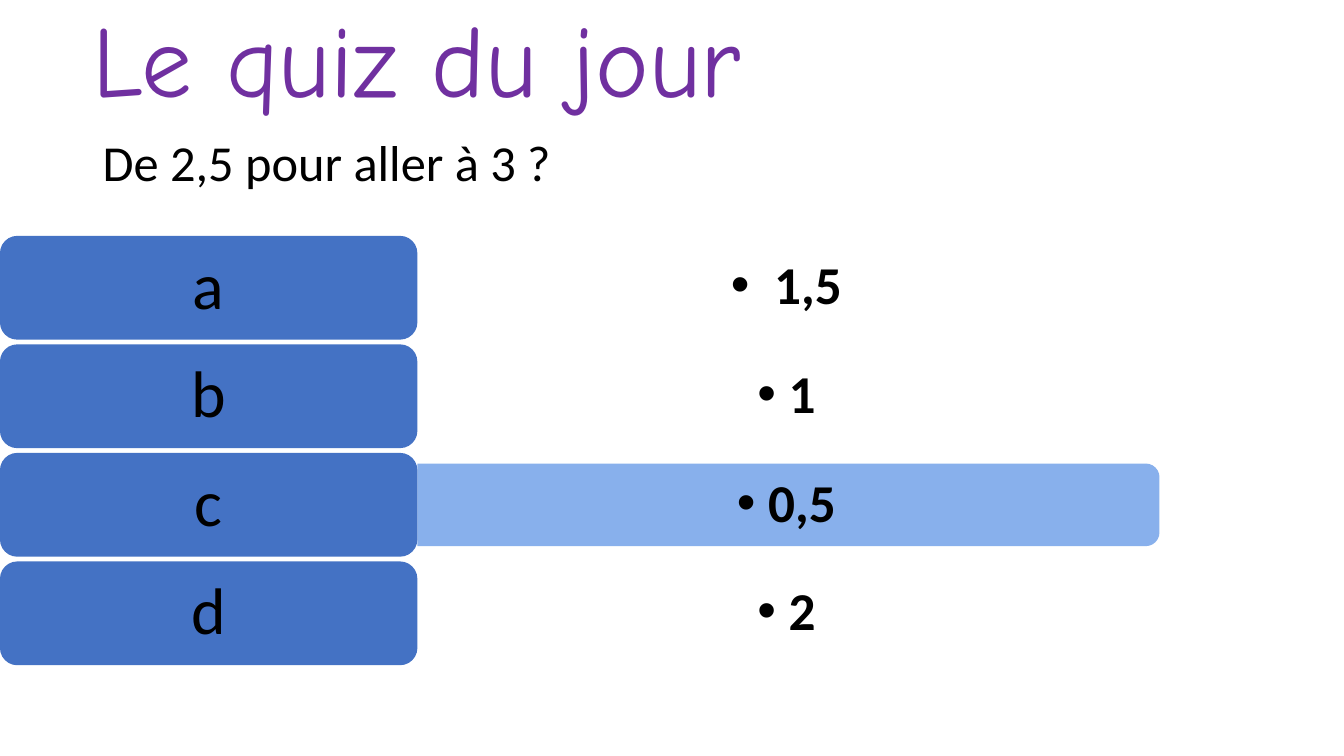
from dataclasses import dataclass

from lxml.etree import SubElement
from pptx import Presentation
from pptx.dml.color import RGBColor as RGB
from pptx.enum.shapes import MSO_SHAPE as Kind
from pptx.enum.text import MSO_ANCHOR as Anchor, MSO_AUTO_SIZE as Fit, PP_ALIGN as Align
from pptx.oxml.ns import qn
from pptx.util import Inches, Pt


@dataclass(frozen=True)
class Theme:
    violet: str = "7030A0"
    ink: str = "000000"
    blue: str = "4472C4"
    light: str = "7CA8EA"
    white: str = "FFFFFF"
    body: str = "Calibri"
    hand: str = "Comic Neue"
    title: float = 72.5
    ask: int = 36
    mark: int = 47
    reply: int = 38


THEME = Theme()
ROWS = [("a", " 1,5"), ("b", "1"), ("c", "0,5"), ("d", "2")]
RIGHT = "c"
TOP, LAST, TALL, WIDE = 2.34, 5.57, 1.03, 4.14
BAR_W, BAR_H = 7.36, 0.82
TEXT_W, TEXT_H = 7.32, 0.74


def apply(item, form):
    for name, value in form.items():
        setattr(item, name, value)


def write(shape, text, size, color=THEME.ink, face=THEME.body, bold=False,
          align=Align.CENTER, space=0.9, pad=(0.1, 0.05), anchor=Anchor.MIDDLE):
    frame = shape.text_frame
    side, edge = map(Inches, pad)
    apply(frame, dict(word_wrap=True, auto_size=Fit.NONE, vertical_anchor=anchor,
                      margin_left=side, margin_right=side,
                      margin_top=edge, margin_bottom=edge))
    para = frame.paragraphs[0]
    apply(para, dict(alignment=align, line_spacing=space))
    run = para.add_run()
    run.text = text
    apply(run.font, dict(name=face, size=Pt(size), bold=bold))
    run.font.color.rgb = RGB.from_string(color)
    return para


def add_box(slide, *place):
    return slide.shapes.add_textbox(*map(Inches, place))


def add_block(slide, kind, color, *place):
    block = slide.shapes.add_shape(kind, *map(Inches, place))
    block.shadow.inherit = False
    block.fill.solid()
    block.fill.fore_color.rgb = RGB.from_string(color)
    block.line.fill.background()
    return block


def add_bar(slide, color, mid):
    left = WIDE + (BAR_W - BAR_H) / 2
    bar = add_block(slide, Kind.ROUND_2_SAME_RECTANGLE, color,
                    left, mid - BAR_W / 2, BAR_H, BAR_W)
    bar.rotation = 90
    tint = bar.fill._xPr.find(qn("a:solidFill"))[0]
    SubElement(tint, qn("a:alpha"), val="90000")


def add_bullet(para):
    props = para._p.get_or_add_pPr()
    props.set("marL", str(Inches(0.31)))
    props.set("indent", str(Inches(-0.31)))
    SubElement(props, qn("a:buFont"), typeface="Arial")
    SubElement(props, qn("a:buChar"), char="•")


def add_row(slide, top, mark, reply):
    mid = top + TALL / 2
    add_bar(slide, THEME.light if mark == RIGHT else THEME.white, mid)
    box = add_box(slide, WIDE, mid - TEXT_H / 2, TEXT_W, TEXT_H)
    add_bullet(write(box, reply, THEME.reply, bold=True, pad=(0.16, 0.08)))
    label = add_block(slide, Kind.ROUNDED_RECTANGLE, THEME.blue, 0, top, WIDE, TALL)
    write(label, mark, THEME.mark, pad=(0.2, 0.1))


def add_title(slide, text):
    title = slide.shapes.title
    apply(title, dict(left=Inches(0.92), top=Inches(0.27),
                      width=Inches(11.5), height=Inches(1.15)))
    write(title, text, THEME.title, THEME.violet, THEME.hand,
          align=Align.LEFT, pad=(0, 0))
    title.text_frame.margin_bottom = Inches(0.4)


def main():
    deck = Presentation()
    apply(deck, dict(slide_width=Inches(13.33), slide_height=Inches(7.5)))
    slide = deck.slides.add_slide(deck.slide_layouts[5])
    add_title(slide, "Le quiz du jour")
    step = (LAST - TOP) / (len(ROWS) - 1)
    for i, (mark, reply) in enumerate(ROWS):
        add_row(slide, TOP + i * step, mark, reply)
    ask = add_box(slide, 0.92, 1.25, 6.72, 0.71)
    write(ask, "De 2,5 pour aller à 3 ?", THEME.ask, align=Align.LEFT,
          space=1.0, anchor=Anchor.TOP)
    deck.save("out.pptx")


if __name__ == "__main__":
    main()
